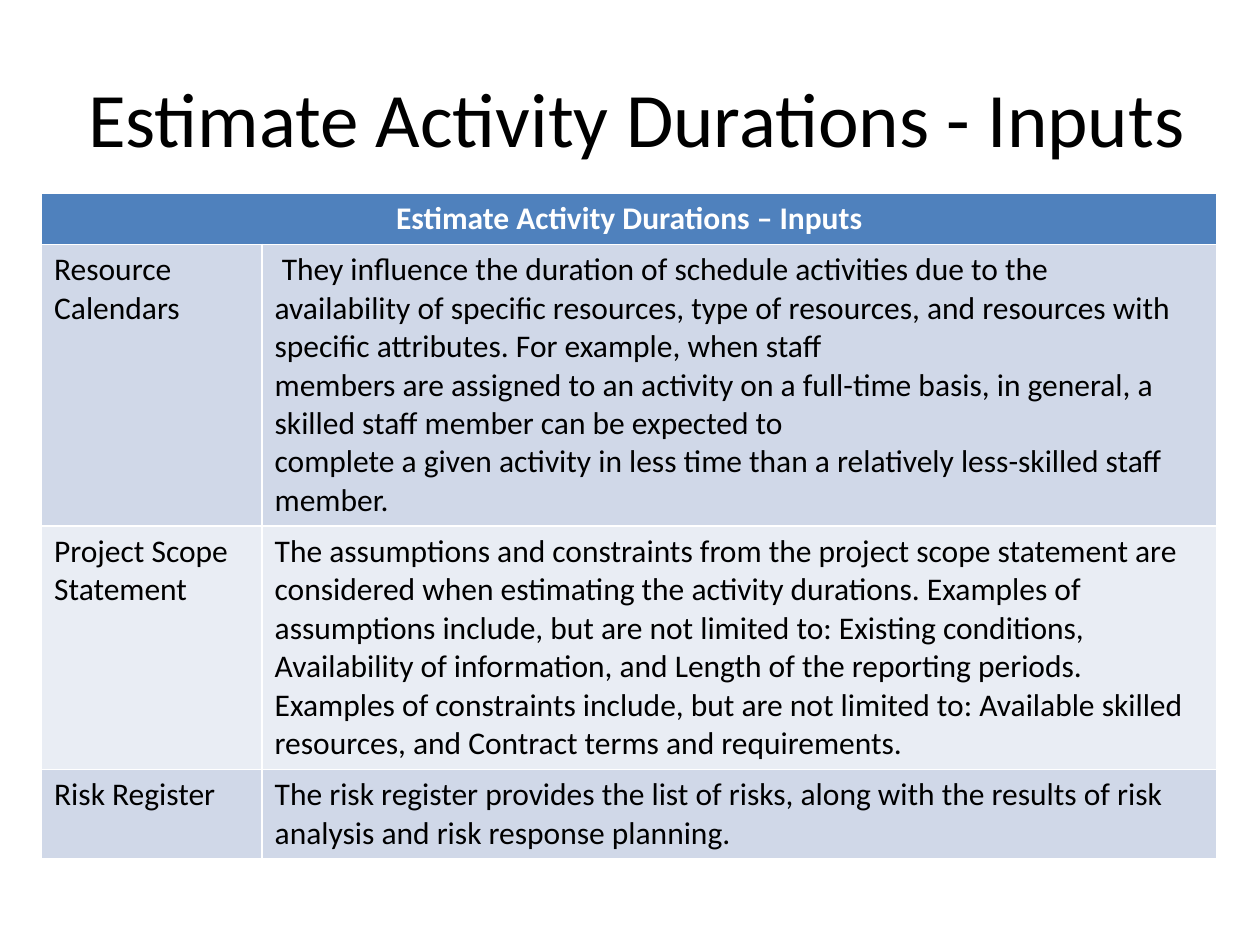
from dataclasses import dataclass

from pptx import Presentation
from pptx.dml.color import RGBColor
from pptx.enum.text import MSO_ANCHOR, PP_ALIGN
from pptx.util import Inches, Pt

CENTER, LEFT = PP_ALIGN.CENTER, PP_ALIGN.LEFT
MIDDLE = MSO_ANCHOR.MIDDLE

FONT = "Calibri"
COLORS = {
    "text": "000000",
    "header_text": "FFFFFF",
    "header": "4F81BD",
    "odd_row": "D0D8E8",
    "even_row": "E9EDF4",
}
COLUMN_WIDTHS = (1.75, 7.58)
HEADER_HEIGHT = 0.41


@dataclass
class InputRow:
    name: str
    paragraphs: list[str]
    height: float


INPUT_ROWS = [
    InputRow("Resource Calendars", [
        " They influence the duration of schedule activities due to the",
        "availability of specific resources, type of resources, and resources "
        "with specific attributes. For example, when staff",
        "members are assigned to an activity on a full-time basis, in general, "
        "a skilled staff member can be expected to",
        "complete a given activity in less time than a relatively "
        "less-skilled staff member.",
    ], 2.23),
    InputRow("Project Scope Statement", [
        "The assumptions and constraints from the project scope statement are "
        "considered when estimating the activity durations. Examples of "
        "assumptions include, but are not limited to: Existing conditions, "
        "Availability of information, and Length of the reporting periods. "
        "Examples of constraints include, but are not limited to: Available "
        "skilled resources, and Contract terms and requirements.",
    ], 1.92),
    InputRow("Risk Register", [
        "The risk register provides the list of risks, along with the results "
        "of risk analysis and risk response planning.",
    ], 0.7),
]


def write_text(text_frame, paragraphs: list[str], size: float, color: str,
               align=LEFT, bold: bool = False) -> None:
    text_frame.text = "\n".join(paragraphs)
    for paragraph in text_frame.paragraphs:
        paragraph.alignment = align
        font = paragraph.font
        font.name, font.size, font.bold = FONT, Pt(size), bold
        font.color.rgb = RGBColor.from_string(COLORS[color])


def fill_cell(cell, paragraphs: list[str], fill: str, color: str = "text",
              align=LEFT, bold: bool = False) -> None:
    cell.fill.solid()
    cell.fill.fore_color.rgb = RGBColor.from_string(COLORS[fill])
    write_text(cell.text_frame, paragraphs, 18, color, align, bold)


def add_title(slide) -> None:
    title = slide.shapes.title
    title.left, title.top = Inches(0.5), Inches(0.3)
    title.width, title.height = Inches(9.25), Inches(1.25)
    title.text_frame.vertical_anchor = MIDDLE
    write_text(title.text_frame, ["Estimate Activity Durations - Inputs "],
               44, "text", CENTER)


def add_inputs_table(slide) -> None:
    heights = [HEADER_HEIGHT] + [row.height for row in INPUT_ROWS]
    table = slide.shapes.add_table(
        len(heights), len(COLUMN_WIDTHS), Inches(0.33), Inches(1.53),
        Inches(sum(COLUMN_WIDTHS)), Inches(sum(heights))).table
    for column, width in zip(table.columns, COLUMN_WIDTHS):
        column.width = Inches(width)
    for table_row, height in zip(table.rows, heights):
        table_row.height = Inches(height)

    # Header across both columns
    header = table.cell(0, 0)
    header.merge(table.cell(0, 1))
    fill_cell(header, ["Estimate Activity Durations – Inputs"], "header",
              "header_text", CENTER, bold=True)

    # Banded body rows
    for index, row in enumerate(INPUT_ROWS, start=1):
        fill = "odd_row" if index % 2 else "even_row"
        fill_cell(table.cell(index, 0), [row.name], fill)
        fill_cell(table.cell(index, 1), row.paragraphs, fill)


def main() -> None:
    presentation = Presentation()
    presentation.slide_width = Inches(10)
    presentation.slide_height = Inches(7.5)
    title_only = presentation.slide_layouts[5]
    slide = presentation.slides.add_slide(title_only)
    add_title(slide)
    add_inputs_table(slide)
    presentation.save("out.pptx")


if __name__ == "__main__":
    main()
